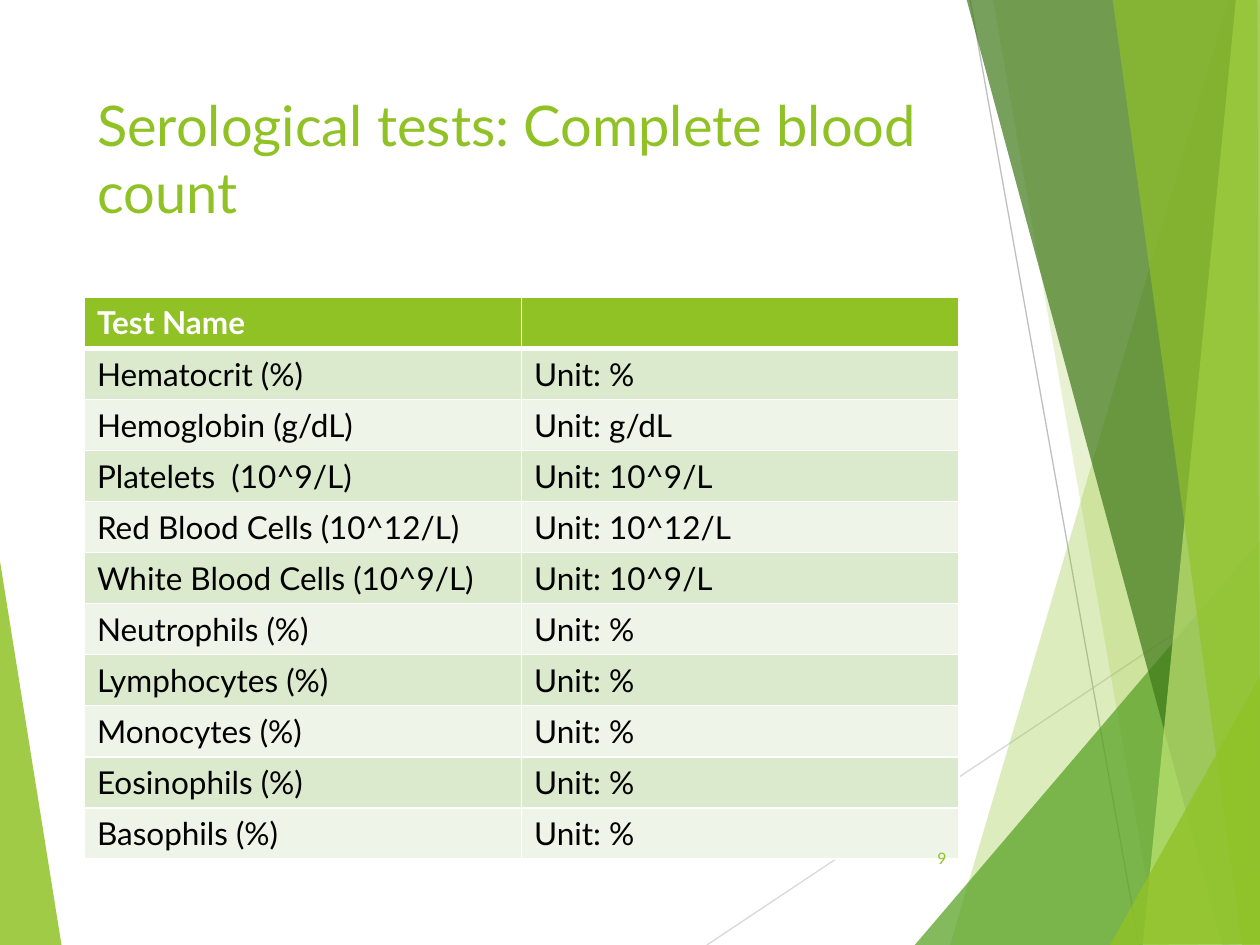
from lxml.etree import SubElement
from pptx import Presentation
from pptx.dml.color import RGBColor
from pptx.enum.shapes import MSO_CONNECTOR as Connector
from pptx.enum.text import MSO_ANCHOR as Anchor, MSO_AUTO_SIZE as AutoSize, PP_ALIGN as Align
from pptx.oxml.ns import qn
from pptx.util import Pt

PX = 9144
FONT = "Lato"
GREEN, WHITE, BLACK = "90C226", "FFFFFF", "000000"
BANDS = ("DBE9CD", "EEF4E8")

RAYS = [((561, 750), (1001, 457), "D9D9D9"), ((770, 0), (904, 750), "BFBFBF")]

FACETS = [
    ([(-1, 439), (49, 751), (-1, 750)], GREEN, 85),
    ([(975, 0), (754, 750), (1002, 751), (1001, 1)], GREEN, 30),
    ([(788, -1), (919, 750), (1001, 750), (1001, -1)], GREEN, 20),
    ([(726, 750), (1000, 429), (1001, 750)], "54A021", 72),
    ([(767, -1), (970, 750), (1001, 749), (1001, -1)], "3F7819", 70),
    ([(981, -1), (907, 750), (1001, 750), (1000, -1)], "C0E474", 70),
    ([(883, -1), (986, 750), (1000, 750), (998, -1)], GREEN, 65),
    ([(881, 750), (1001, 535), (1001, 749)], GREEN, 80),
]

TESTS = [
    ("Hematocrit (%)", "%"),
    ("Hemoglobin (g/dL)", "g/dL"),
    ("Platelets  (10^9/L)", "10^9/L"),
    ("Red Blood Cells (10^12/L)", "10^12/L"),
    ("White Blood Cells (10^9/L)", "10^9/L"),
    ("Neutrophils (%)", "%"),
    ("Lymphocytes (%)", "%"),
    ("Monocytes (%)", "%"),
    ("Eosinophils (%)", "%"),
    ("Basophils (%)", "%"),
]


def px(*lengths):
    return [length * PX for length in lengths]


def paint(color_format, color):
    color_format.rgb = RGBColor.from_string(color)


def write(frame, text, size, color, bold=False, align=Align.LEFT):
    frame.text = text
    for paragraph in frame.paragraphs:
        paragraph.alignment = align
        for run in paragraph.runs:
            run.font.name = FONT
            run.font.size = Pt(size)
            run.font.bold = bold
            paint(run.font.color, color)


def add_ray(slide, start, end, color):
    ray = slide.shapes.add_connector(Connector.STRAIGHT, *px(*start, *end))
    ray.line.width = Pt(0.75)
    paint(ray.line.color, color)
    SubElement(ray.element.spPr, qn("a:effectLst"))


def add_facet(slide, corners, color, opacity):
    builder = slide.shapes.build_freeform(*corners[0], scale=PX)
    builder.add_line_segments(corners[1:], close=True)
    facet = builder.convert_to_shape()
    facet.shadow.inherit = False
    facet.line.fill.background()
    facet.fill.solid()
    paint(facet.fill.fore_color, color)
    tint = facet.element.spPr.find(f"{qn('a:solidFill')}/{qn('a:srgbClr')}")
    SubElement(tint, qn("a:alpha"), val=str(opacity * 1000))


def set_title(slide, text):
    title = slide.shapes.title
    title.left, title.top, title.width, title.height = px(67, 67, 694, 144)
    frame = title.text_frame
    frame.word_wrap = True
    frame.auto_size = AutoSize.NONE
    frame.vertical_anchor = Anchor.TOP
    write(frame, text, 32, GREEN)


def set_borders(cell, top, bottom):
    properties = cell._tc.get_or_add_tcPr()
    for side, width in (("L", 1), ("R", 1), ("T", top), ("B", bottom)):
        border = SubElement(properties, qn(f"a:ln{side}"), w=str(Pt(width)))
        fill = SubElement(border, qn("a:solidFill"))
        SubElement(fill, qn("a:srgbClr"), val=WHITE)


def add_test_table(slide):
    rows = [("Test Name", "")] + [(name, f"Unit: {unit}") for name, unit in TESTS]
    table = slide.shapes.add_table(len(rows), 2, *px(67, 236, 694, 446)).table
    for row, texts in enumerate(rows):
        header = row == 0
        for column, text in enumerate(texts):
            cell = table.cell(row, column)
            set_borders(cell, 3 if row == 1 else 1, 3 if header else 1)
            cell.fill.solid()
            paint(cell.fill.fore_color, GREEN if header else BANDS[(row - 1) % 2])
            cell.vertical_anchor = Anchor.TOP if header else Anchor.MIDDLE
            write(cell.text_frame, text, 18, WHITE if header else BLACK, header)


def add_page_number(slide, number):
    frame = slide.shapes.add_textbox(*px(705, 661, 56, 40)).text_frame
    frame.word_wrap = True
    frame.vertical_anchor = Anchor.MIDDLE
    write(frame, number, 9, GREEN, align=Align.RIGHT)


def main():
    deck = Presentation()
    deck.slide_width, deck.slide_height = px(1000, 750)
    slide = deck.slides.add_slide(deck.slide_layouts[5])
    for ray in RAYS:
        add_ray(slide, *ray)
    for facet in FACETS:
        add_facet(slide, *facet)
    set_title(slide, "Serological tests: Complete blood count")
    add_test_table(slide)
    add_page_number(slide, "9")
    deck.save("out.pptx")


if __name__ == "__main__":
    main()
